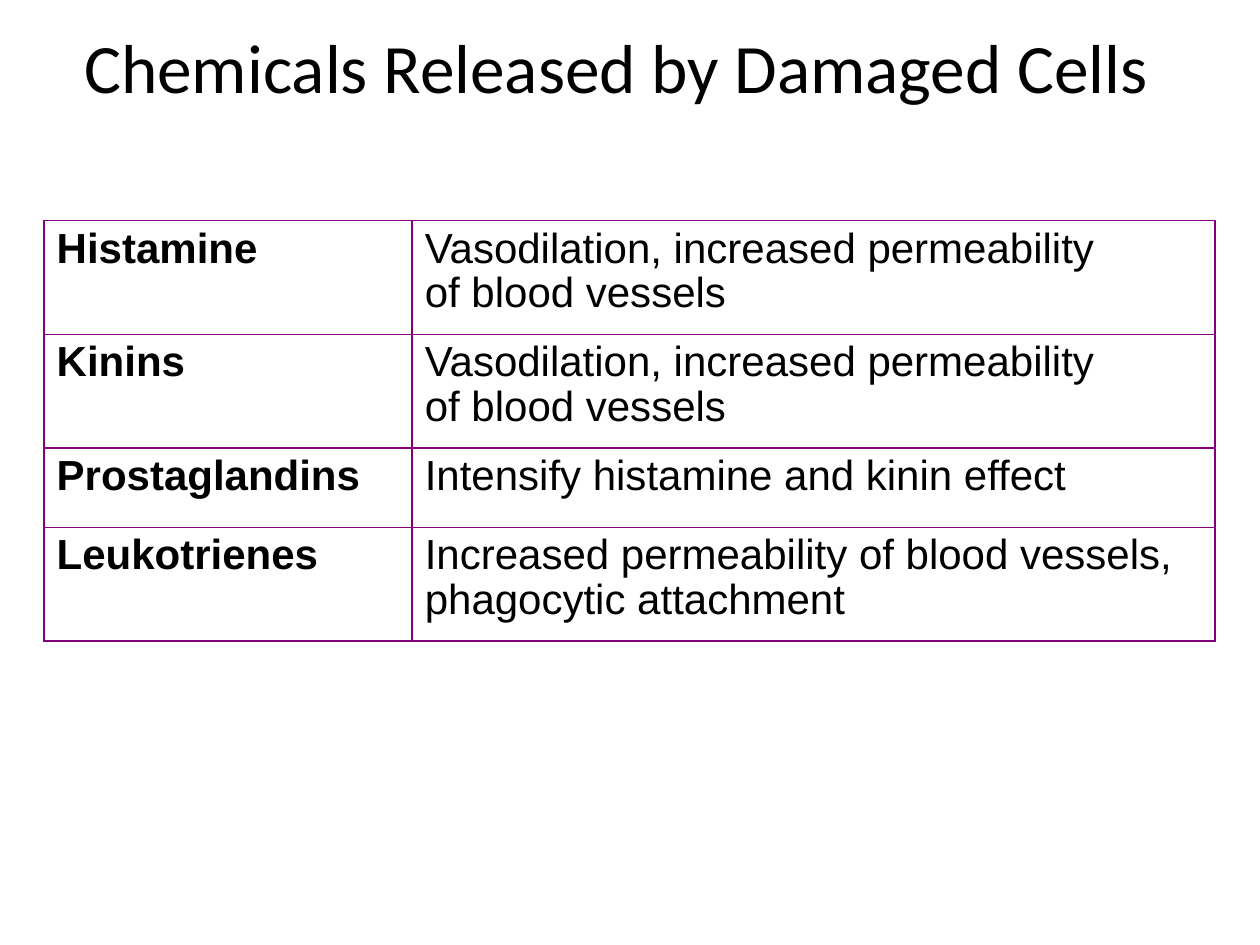
"""Build a slide with a table of chemicals released by damaged cells."""
from dataclasses import dataclass

from lxml import etree
from pptx import Presentation
from pptx import util as u
from pptx.dml.color import RGBColor
from pptx.enum import text
from pptx.oxml.ns import qn

COLORS = {"text": "000000", "border": "800080", "cell": "FFFFFF"}
TITLE_FORMAT = {"name": "Calibri", "size": u.Pt(39.6), "bold": False}
NAME_FORMAT = {"name": "Arial", "size": u.Pt(24), "bold": True}
EFFECT_FORMAT = {**NAME_FORMAT, "bold": False}
COLUMN_WIDTHS = (u.Cm(7.42), u.Cm(16.18))
TALL_ROW, SHORT_ROW = u.Cm(2.29), u.Cm(1.6)
DILATION = "Vasodilation, increased permeability \vof blood vessels"


@dataclass
class Chemical:
    name: str
    effect: str
    height: u.Length = TALL_ROW


CHEMICALS = [
    Chemical("Histamine", DILATION),
    Chemical("Kinins", DILATION),
    Chemical("Prostaglandins", "Intensify histamine and kinin effect", SHORT_ROW),
    Chemical("Leukotrienes", "Increased permeability of blood vessels, phagocytic attachment"),
]


def format_font(paragraph, font_format: dict) -> None:
    for attribute, value in font_format.items():
        setattr(paragraph.font, attribute, value)
    paragraph.font.color.rgb = RGBColor.from_string(COLORS["text"])


def add_borders(cell) -> None:
    properties = cell._tc.get_or_add_tcPr()
    for position, side in enumerate(("lnL", "lnR", "lnT", "lnB")):
        line = etree.Element(qn(f"a:{side}"), w=str(u.Pt(1)))
        fill = etree.SubElement(line, qn("a:solidFill"))
        etree.SubElement(fill, qn("a:srgbClr"), val=COLORS["border"])
        properties.insert(position, line)


def fill_cell(cell, content: str, font_format: dict) -> None:
    cell.text = content
    cell.fill.solid()
    cell.fill.fore_color.rgb = RGBColor.from_string(COLORS["cell"])
    paragraph = cell.text_frame.paragraphs[0]
    paragraph.line_spacing = 0.96
    format_font(paragraph, font_format)
    add_borders(cell)


def add_title(slide, content: str) -> None:
    title = slide.shapes.title
    placement = {"left": u.Cm(0.36), "top": u.Cm(0.28),
                 "width": u.Cm(24.13), "height": u.Cm(2.11)}
    for attribute, value in placement.items():
        setattr(title, attribute, value)
    title.text = content
    title.text_frame.vertical_anchor = text.MSO_ANCHOR.MIDDLE
    title.text_frame.auto_size = text.MSO_AUTO_SIZE.NONE
    paragraph = title.text_frame.paragraphs[0]
    paragraph.alignment = text.PP_ALIGN.CENTER
    format_font(paragraph, TITLE_FORMAT)


def add_chemical_table(slide, chemicals: list[Chemical]) -> None:
    height = sum(chemical.height for chemical in chemicals)
    table = slide.shapes.add_table(
        len(chemicals), len(COLUMN_WIDTHS), u.Cm(0.89), u.Cm(4.45),
        sum(COLUMN_WIDTHS), height).table
    table.first_row = table.horz_banding = False
    for column, width in zip(table.columns, COLUMN_WIDTHS):
        column.width = width
    for row, chemical in zip(table.rows, chemicals):
        row.height = chemical.height
        fill_cell(row.cells[0], chemical.name, NAME_FORMAT)
        fill_cell(row.cells[1], chemical.effect, EFFECT_FORMAT)


def main() -> None:
    presentation = Presentation()
    presentation.slide_width, presentation.slide_height = u.Cm(25.4), u.Cm(19.05)
    slide = presentation.slides.add_slide(presentation.slide_layouts[5])
    add_title(slide, "Chemicals Released by Damaged Cells")
    add_chemical_table(slide, CHEMICALS)
    presentation.save("out.pptx")


if __name__ == "__main__":
    main()
